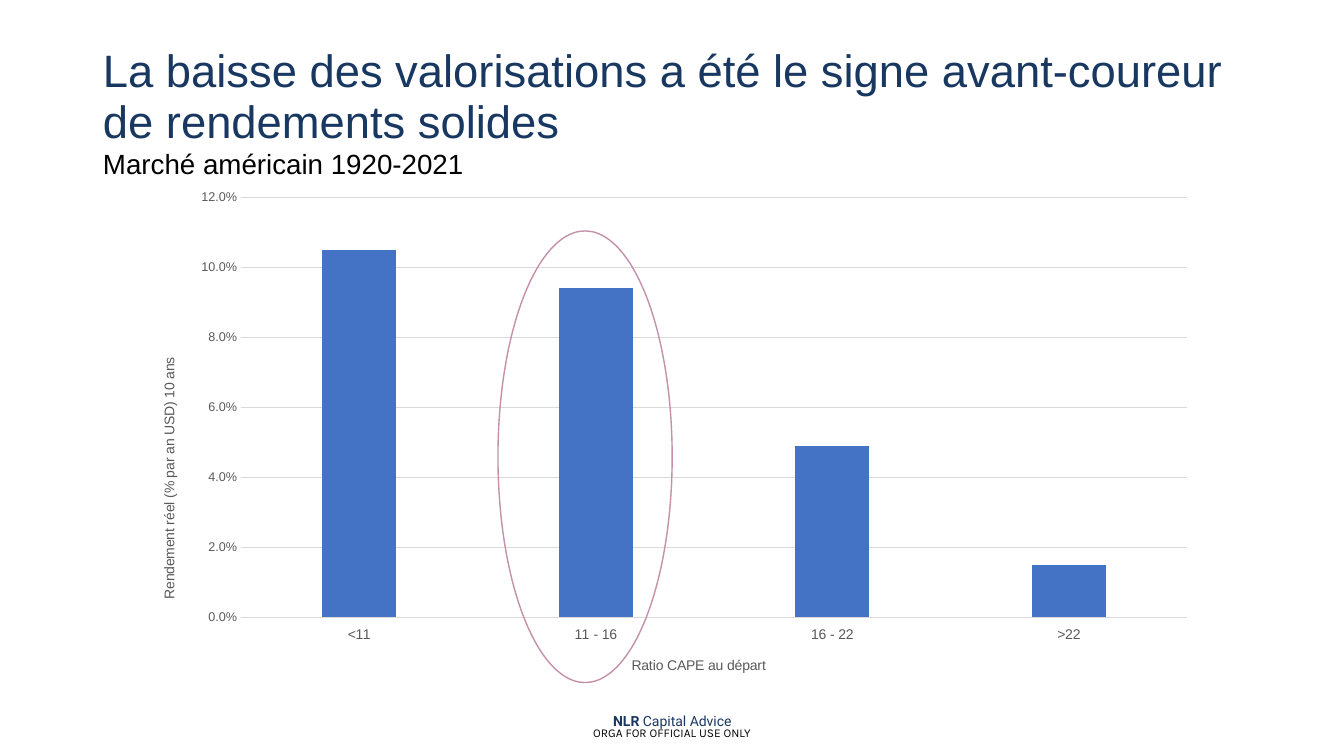
from lxml import etree
from pptx import Presentation
from pptx.chart.data import CategoryChartData
from pptx.dml.color import RGBColor
from pptx.enum.chart import XL_CHART_TYPE, XL_TICK_LABEL_POSITION, XL_TICK_MARK
from pptx.enum.shapes import MSO_SHAPE
from pptx.enum.text import MSO_ANCHOR, MSO_AUTO_SIZE, PP_ALIGN
from pptx.oxml.ns import qn
from pptx.util import Cm, Pt

# Content
HEADLINE = "La baisse des valorisations a été le signe avant-coureur de rendements solides"
SUBTITLE = "Marché américain 1920-2021"
FIRM = ("NLR ", "Capital Advice")
CLASSIFICATION = "ORGA FOR OFFICIAL USE ONLY"
CATEGORY_TITLE = "Ratio CAPE au départ"
VALUE_TITLE = "Rendement réel (% par an USD) 10 ans"
RETURNS = {"<11": 0.105, "11 - 16": 0.094, "16 - 22": 0.049, ">22": 0.015}

COLORS = {"navy": "193861", "black": "000000", "gray": "595959",
          "grid": "D9D9D9", "bar": "4472C4", "rose": "C490AA"}

# Left, top, width, height in centimetres
SLIDE_SIZE = (33.87, 19.05)
BOXES = {
    "title": (2.34, 1.02, 29.21, 3.68),
    "chart": (3.43, 4.52, 27, 13),
    "highlight": (12.55, 5.82, 4.39, 11.38),
    "firm": (11.23, 17.65, 11.43, 1.02),
    "classification": (0, 18.16, SLIDE_SIZE[0], 0.61),
}


def color(name):
    return RGBColor.from_string(COLORS[name])


def place(name):
    return [Cm(length) for length in BOXES[name]]


def set_font(font, name, size, color_name, bold=False):
    font.name, font.size, font.bold = name, Pt(size), bold
    font.color.rgb = color(color_name)


def add_run(paragraph, text, *style):
    run = paragraph.add_run()
    run.text = text
    set_font(run.font, *style)


def add_centered_text(slide, box, runs):
    frame = slide.shapes.add_textbox(*place(box)).text_frame
    frame.word_wrap = True
    frame.vertical_anchor = MSO_ANCHOR.MIDDLE
    paragraph = frame.paragraphs[0]
    paragraph.alignment = PP_ALIGN.CENTER
    for run in runs:
        add_run(paragraph, *run)


def set_layout(parent, index, **fractions):
    """Position a chart part by fractions of the chart area."""
    for old in parent.findall(qn("c:layout")):
        parent.remove(old)
    layout = etree.Element(qn("c:layout"))
    manual = etree.SubElement(layout, qn("c:manualLayout"))
    settings = {"xMode": "edge", "yMode": "edge", **fractions}
    if "w" in fractions:
        settings = {"layoutTarget": "inner", **settings}
    for tag, value in settings.items():
        etree.SubElement(manual, qn(f"c:{tag}")).set("val", str(value))
    parent.insert(index, layout)


def format_axis(axis, title, size, x, y):
    axis.major_tick_mark = axis.minor_tick_mark = XL_TICK_MARK.NONE
    set_font(axis.tick_labels.font, "Arial", size, "gray")
    paragraph = axis.axis_title.text_frame.paragraphs[0]
    add_run(paragraph, title, "Arial", 10, "gray")
    set_layout(axis.axis_title.element, 1, x=x, y=y)


def add_returns_chart(slide):
    data = CategoryChartData(number_format="0.0%")
    data.categories = list(RETURNS)
    data.add_series("Series 1", list(RETURNS.values()))
    chart = slide.shapes.add_chart(
        XL_CHART_TYPE.COLUMN_CLUSTERED, *place("chart"), data).chart
    chart.has_legend = chart.has_title = False
    set_font(chart.font, "Arial", 10, "black")

    plot = chart.plots[0]
    plot.gap_width, plot.overlap = 219, -27
    plot.vary_by_categories = False
    fill = plot.series[0].format.fill
    fill.solid()
    fill.fore_color.rgb = color("bar")

    categories, values = chart.category_axis, chart.value_axis
    format_axis(categories, CATEGORY_TITLE, 10, 0.46, 0.92)
    format_axis(values, VALUE_TITLE, 9, 0.02, 0.34)
    categories.tick_label_position = XL_TICK_LABEL_POSITION.LOW
    values.minimum_scale, values.maximum_scale, values.major_unit = 0, 0.12, 0.02
    values.tick_labels.number_format = "0.0%"
    values.tick_labels.number_format_is_linked = False
    values.format.line.fill.background()
    for line in (categories.format.line, values.major_gridlines.format.line):
        line.color.rgb = color("grid")
        line.width = Pt(0.75)

    plot_area = chart.element.find(".//" + qn("c:plotArea"))
    set_layout(plot_area, 0, x=0.098, y=0.035, w=0.883, h=0.814)


def main():
    presentation = Presentation()
    presentation.slide_width, presentation.slide_height = map(Cm, SLIDE_SIZE)
    slide = presentation.slides.add_slide(presentation.slide_layouts[5])

    # Title and subtitle
    title = slide.shapes.title
    title.left, title.top, title.width, title.height = place("title")
    frame = title.text_frame
    frame.word_wrap = True
    frame.auto_size = MSO_AUTO_SIZE.NONE
    frame.vertical_anchor = MSO_ANCHOR.MIDDLE
    paragraph = frame.paragraphs[0]
    paragraph.alignment = PP_ALIGN.LEFT
    paragraph.line_spacing = 0.94
    add_run(paragraph, HEADLINE, "Arial", 32.4, "navy")
    paragraph.add_line_break()
    add_run(paragraph, SUBTITLE, "Arial", 19.8, "black")

    # Footer
    add_centered_text(slide, "classification",
                      [(CLASSIFICATION, "Karla", 8.5, "black")])
    add_centered_text(slide, "firm", [(FIRM[0], "Roboto", 10, "navy", True),
                                      (FIRM[1], "Roboto", 10, "navy")])

    # Chart with the highlighted range
    add_returns_chart(slide)
    highlight = slide.shapes.add_shape(MSO_SHAPE.OVAL, *place("highlight"))
    highlight.shadow.inherit = False
    highlight.fill.background()
    highlight.line.color.rgb = color("rose")
    highlight.line.width = Pt(1)

    presentation.save("out.pptx")


if __name__ == "__main__":
    main()
